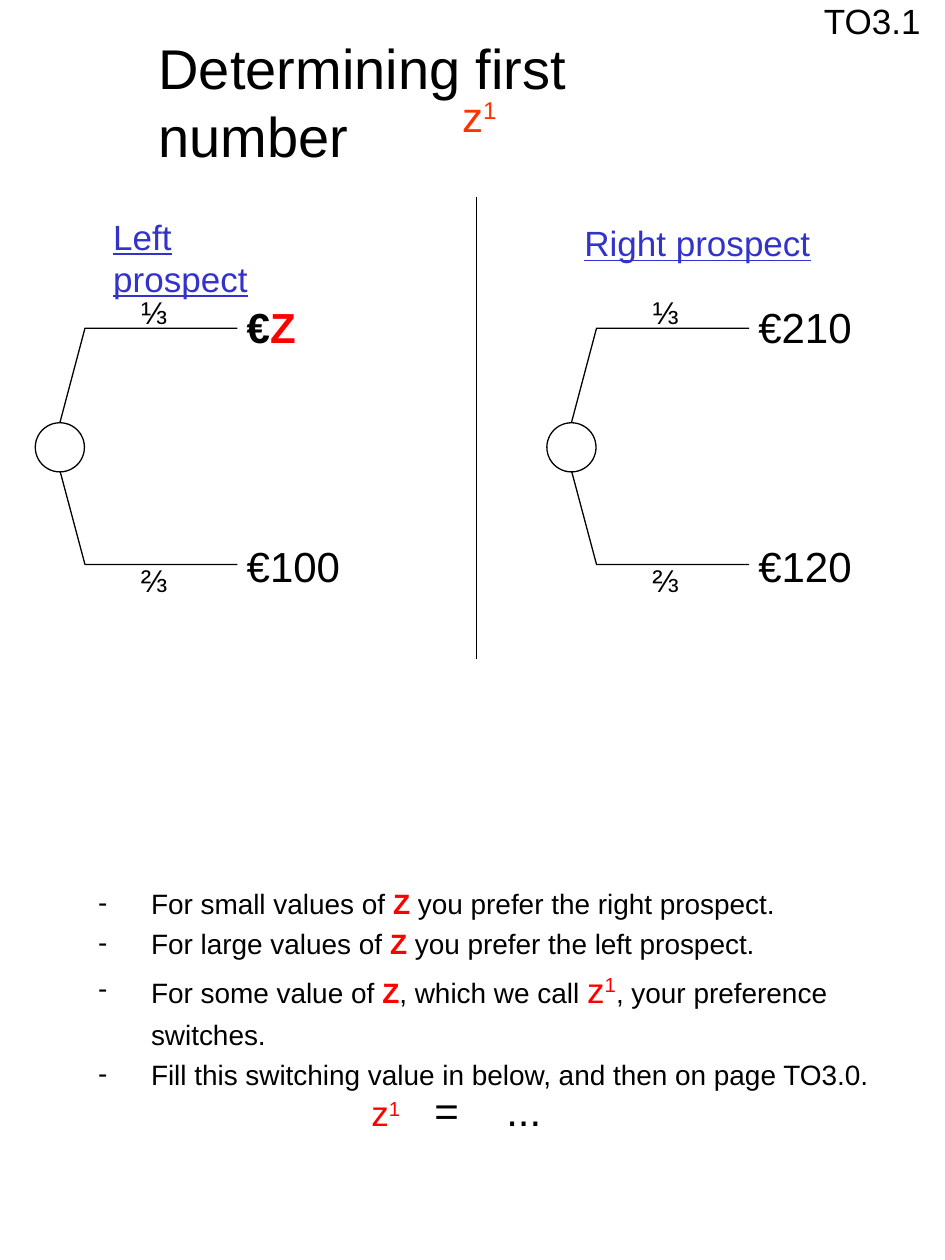
from pptx import Presentation
from pptx import util as u
from pptx.dml.color import RGBColor
from pptx.enum import shapes
from pptx.oxml.ns import qn
from lxml import etree

BLACK = RGBColor(0x00, 0x00, 0x00)
WHITE = RGBColor(0xFF, 0xFF, 0xFF)
RED = RGBColor(0xFF, 0x00, 0x00)
ORANGE = RGBColor(0xFF, 0x33, 0x00)
BLUE = RGBColor(0x33, 0x33, 0xCC)

COLUMNS, ROWS = 75, 100
PROSPECT_STEP = 40.6  # columns from the left prospect to the right one
BULLET_INDENT = 4.2
Z = ("Z", {"color": RED, "bold": True})


def grid(n):
    """Length of n grid cells; a cell is a tenth of an inch."""
    return u.Inches(n / 10)


def add_run(p, words, size, color=BLACK, bold=False, underline=False, raised=False):
    r = p.add_run()
    r.text = words
    r.font.name = "Arial"
    r.font.size = u.Pt(size)
    r.font.color.rgb = color
    r.font.bold = bold
    r.font.underline = underline
    if raised:
        r.font._element.set("baseline", "30000")


def add_runs(p, runs, size):
    """Runs are (words, format) pairs; size holds unless a format names its own."""
    for words, form in runs:
        add_run(p, words, **{"size": size, **form})


def z1(color, size):
    return [("z", {"color": color, "size": size}),
            ("1", {"color": color, "size": size, "raised": True})]


def add_text(s, col, row, cols, rows, runs, size, wrap=False):
    box = s.shapes.add_textbox(grid(col), grid(row), grid(cols), grid(rows))
    tf = box.text_frame
    tf.word_wrap = wrap
    add_runs(tf.paragraphs[0], runs, size)
    return tf


def style_outline(sp):
    sp.shadow.inherit = False
    sp.line.color.rgb = BLACK
    sp.line.width = u.Pt(0.75)


def add_branch(s, col, row, end_row):
    """Slanted line from the chance node, then level to the payoff."""
    points = [(grid(col + 2.5), grid(end_row)), (grid(col + 14.6), grid(end_row))]
    builder = s.shapes.build_freeform(grid(col), grid(row), scale=1.0)
    builder.add_line_segments(points, close=False)
    sp = builder.convert_to_shape()
    sp.fill.background()
    style_outline(sp)


def add_prospect(s, col, top_payoff, bottom_payoff):
    """Chance node at column col with two branches, odds and payoffs."""
    for end_row, odds, odds_row, payoff, payoff_row in (
            (26.05, "⅓", 22.8, top_payoff, 23.45),
            (44.8, "⅔", 44, bottom_payoff, 42.4)):
        add_branch(s, col + 1.45, 35.45, end_row)
        add_text(s, col + 7.4, odds_row, 4.8, 4, [(odds, {})], 18)
        add_text(s, col + 15.8, payoff_row, 9.4, 5, payoff, 24)
    node = s.shapes.add_shape(shapes.MSO_SHAPE.OVAL, grid(col), grid(33.55),
                              grid(3.9), grid(3.9))
    node.fill.solid()
    node.fill.fore_color.rgb = WHITE
    style_outline(node)


def add_divider(s, col, top, bottom):
    line = s.shapes.add_connector(shapes.MSO_CONNECTOR.STRAIGHT, grid(col),
                                  grid(top), grid(col), grid(bottom))
    line.line.color.rgb = BLACK
    line.line.width = u.Pt(0.75)
    etree.SubElement(line._element.spPr, qn("a:effectLst"))


def add_bullets(s, col, row, cols, rows, items):
    tf = add_text(s, col, row, cols, rows, [], 16, wrap=True)
    for i, runs in enumerate(items):
        p = tf.paragraphs[0] if i == 0 else tf.add_paragraph()
        p.line_spacing = 1.2
        pPr = p._p.get_or_add_pPr()
        pPr.set("marL", str(grid(BULLET_INDENT)))
        pPr.set("indent", str(-grid(BULLET_INDENT)))
        etree.SubElement(pPr, qn("a:buFont")).set("typeface", "Arial")
        etree.SubElement(pPr, qn("a:buChar")).set("char", "-")
        add_runs(p, runs, 16)


def add_tabs(p, stops):
    tabs = etree.SubElement(p._p.get_or_add_pPr(), qn("a:tabLst"))
    for stop in stops:
        tab = etree.SubElement(tabs, qn("a:tab"))
        tab.set("pos", str(grid(stop)))
        tab.set("algn", "l")


def main():
    prs = Presentation()
    prs.slide_width, prs.slide_height = grid(COLUMNS), grid(ROWS)
    s = prs.slides.add_slide(prs.slide_layouts[6])

    add_text(s, 64.4, -0.5, 9.7, 4.3, [("TO3.1", {})], 20)
    add_text(s, 11.6, 2.2, 50, 6.3, [("Determining first number", {})], 32, wrap=True)
    add_text(s, 35.7, 6.7, 4.8, 5, z1(ORANGE, 24), 24)

    heading = {"color": BLUE, "underline": True}
    add_text(s, 8, 16.6, 17, 4.3, [("Left prospect", heading)], 20, wrap=True)
    add_text(s, 45.4, 17.1, 22, 4.3, [("Right prospect", heading)], 20, wrap=True)
    add_prospect(s, 2.8, [("€", {"bold": True}), Z], [("€100", {})])
    add_prospect(s, 2.8 + PROSPECT_STEP, [("€210", {})], [("€120", {})])
    add_divider(s, 37.8, 15.6, 52.3)

    add_bullets(s, 6.8, 69.3, 64.5, 17.8, [
        [("For small values of ", {}), Z, (" you prefer the right prospect.", {})],
        [("For large values of ", {}), Z, (" you prefer the left prospect.", {})],
        [("For some value of ", {}), Z, (", which we call ", {}), *z1(RED, 20),
         (", your preference switches.", {})],
        [("Fill this switching value in below, and then on page TO3.0.", {})],
    ])
    answer = add_text(s, 28.5, 85.6, 15.6, 5, z1(RED, 20) + [("\t=\t...", {})], 24)
    add_tabs(answer.paragraphs[0], (5, 10.7))

    prs.save("out.pptx")


if __name__ == "__main__":
    main()
